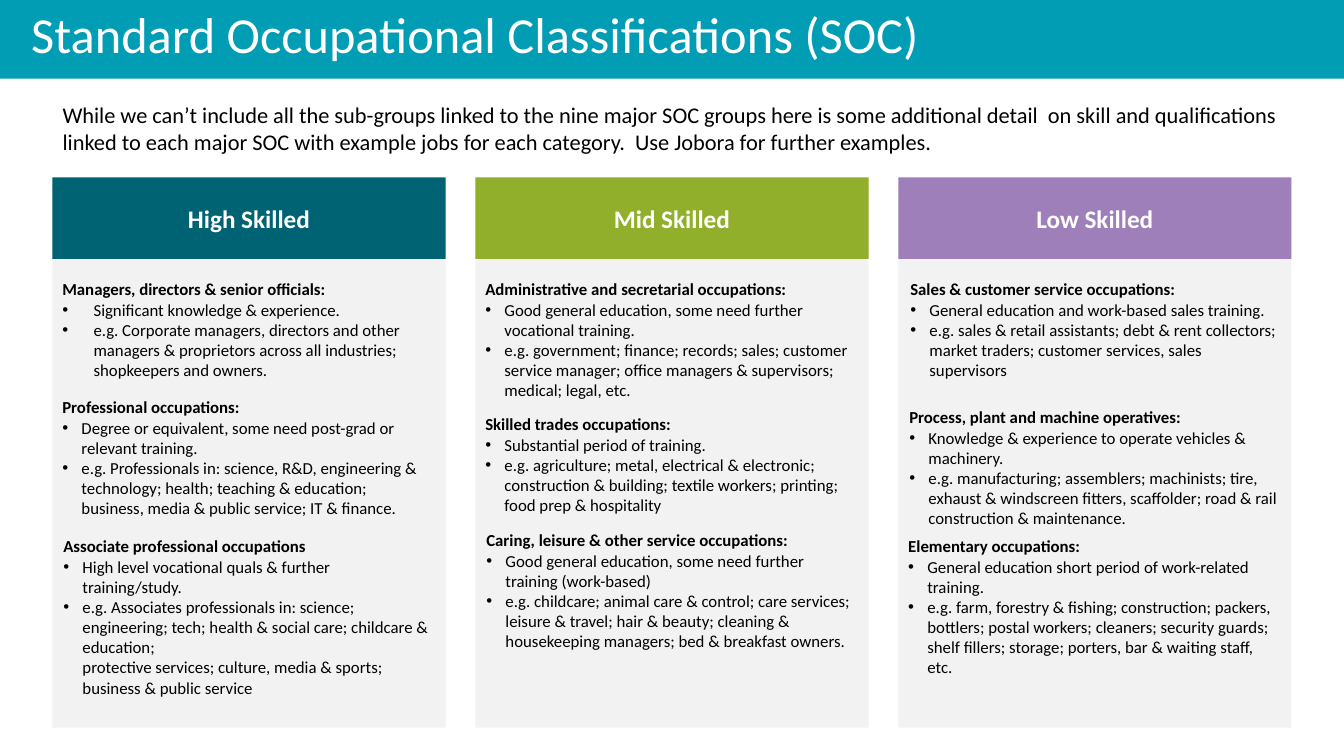
from dataclasses import dataclass

from lxml.etree import SubElement
from pptx import Presentation
from pptx.dml.color import RGBColor
from pptx.enum.shapes import MSO_SHAPE as Shape
from pptx.enum.text import MSO_ANCHOR as Anchor, MSO_AUTO_SIZE as Fit, PP_ALIGN as Align
from pptx.oxml.ns import qn
from pptx.util import Inches, Pt

# Grid of square cells, 0.2 inch each; a text line of 12 pt fills one row
CELL = 0.2
WIDE, HIGH = 66.65, 37.5
EDGE, COL = 2.6, 19.5
GAP = (WIDE - 2 * EDGE - 3 * COL) / 2
HEAD_TOP, PANEL_TOP, LIST_TOP = 8.8, 8.85, 13.6
LIST_WIDE = 19.35
FONT = "Calibri"


@dataclass
class Group:
    row: float  # rows below the top of the lists
    lines: int
    title: str
    items: list[str]
    shift: float = 0
    hang: float = 0.95


@dataclass
class Column:
    name: str
    color: str
    groups: list[Group]


COLUMNS = [
    Column("High Skilled", "006373", [
        Group(0, 5, "Managers, directors & senior officials:", [
            "Significant knowledge & experience.",
            "e.g. Corporate managers, directors and other managers & proprietors "
            "across all industries; shopkeepers and owners."], hang=1.55),
        Group(5.85, 6, "Professional occupations:", [
            "Degree or equivalent, some need post-grad or relevant training.",
            "e.g. Professionals in: science, R&D, engineering & technology; health; "
            "teaching & education; business, media & public service; IT & finance."]),
        Group(12.75, 8, "Associate professional occupations", [
            "High level vocational quals & further training/study.",
            "e.g. Associates professionals in: science; engineering; tech; "
            "health & social care; childcare & education;\n"
            "protective services; culture, media & sports; business & public service"],
            shift=0.05),
    ]),
    Column("Mid Skilled", "92AF2B", [
        Group(0, 6, "Administrative and secretarial occupations:", [
            "Good general education, some need further vocational training.",
            "e.g. government; finance; records; sales; customer service manager; "
            "office managers & supervisors; medical; legal, etc."]),
        Group(6.7, 5, "Skilled trades occupations:", [
            "Substantial period of training.",
            "e.g. agriculture; metal, electrical & electronic; construction & building; "
            "textile workers; printing; food prep & hospitality"]),
        Group(12.45, 6, "Caring, leisure & other service occupations:", [
            "Good general education, some need further training (work-based)",
            "e.g. childcare; animal care & control; care services; leisure & travel; "
            "hair & beauty; cleaning & housekeeping managers; bed & breakfast owners."],
            shift=0.05),
    ]),
    Column("Low Skilled", "9E7FBA", [
        Group(0, 5, "Sales & customer service occupations:", [
            "General education and work-based sales training.",
            "e.g. sales & retail assistants; debt & rent collectors; market traders; "
            "customer services, sales supervisors"], shift=0.1),
        Group(6.35, 6, "Process, plant and machine operatives:", [
            "Knowledge & experience to operate vehicles & machinery.",
            "e.g. manufacturing; assemblers; machinists; tire, exhaust & windscreen "
            "fitters, scaffolder; road & rail construction & maintenance."], shift=0.05),
        Group(12.75, 7, "Elementary occupations:", [
            "General education short period of work-related training.",
            "e.g. farm, forestry & fishing; construction; packers, bottlers; "
            "postal workers; cleaners; security guards; shelf fillers; storage; "
            "porters, bar & waiting staff, etc."]),
    ]),
]


def grid(cells: float) -> int:
    return Inches(cells * CELL)


def paint(target, color: str) -> None:
    target.rgb = RGBColor.from_string(color)


def write(para, text: str, size: int, color: str = "000000", bold: bool = False) -> None:
    para.space_before = Pt(0)
    for num, line in enumerate(text.split("\n")):
        if num:
            para.add_line_break()
        run = para.add_run()
        run.text = line
        run.font.name, run.font.size, run.font.bold = FONT, Pt(size), bold
        paint(run.font.color, color)


def indent(para, hang: float, mark: str = "") -> None:
    props = para._p.get_or_add_pPr()
    props.set("marL", str(grid(hang)))
    props.set("indent", str(-grid(hang)))
    if mark:
        SubElement(props, qn("a:buFont"), typeface="Arial")
        SubElement(props, qn("a:buChar"), char=mark)
    else:
        SubElement(props, qn("a:buNone"))


def block(slide, left: float, top: float, wide: float, high: float, color: str):
    box = slide.shapes.add_shape(
        Shape.RECTANGLE, grid(left), grid(top), grid(wide), grid(high))
    box.shadow.inherit = False
    box.fill.solid()
    paint(box.fill.fore_color, color)
    box.line.fill.background()
    return box


def place(holder, left: float, top: float, wide: float, high: float):
    holder.left, holder.top = grid(left), grid(top)
    holder.width, holder.height = grid(wide), grid(high)
    frame = holder.text_frame
    frame.word_wrap, frame.auto_size = True, Fit.NONE
    frame.vertical_anchor = Anchor.TOP
    para = frame.paragraphs[0]
    para.alignment = Align.LEFT
    return para


def listing(slide, left: float, group: Group) -> None:
    box = slide.shapes.add_textbox(
        grid(left + group.shift), grid(LIST_TOP + group.row),
        grid(LIST_WIDE), grid(group.lines + 1.75))
    frame = box.text_frame
    frame.word_wrap = True
    write(frame.paragraphs[0], group.title, 12, bold=True)
    for item in group.items:
        para = frame.add_paragraph()
        write(para, item, 12)
        indent(para, group.hang, "•")


def column(slide, left: float, col: Column) -> None:
    block(slide, left, PANEL_TOP, COL, 27.25, "F2F2F2")
    head = block(slide, left, HEAD_TOP, COL, 4.05, col.color)
    head.text_frame.vertical_anchor = Anchor.MIDDLE
    para = head.text_frame.paragraphs[0]
    para.alignment = Align.CENTER
    write(para, col.name, 18, "FFFFFF", True)
    for group in col.groups:
        listing(slide, left, group)


def main() -> None:
    deck = Presentation()
    deck.slide_width, deck.slide_height = grid(WIDE), grid(HIGH)
    slide = deck.slides.add_slide(deck.slide_layouts[1])
    title, intro = slide.placeholders

    # Title on its band
    band = block(slide, 0, 0, WIDE, 3.9, "009DB5")
    title.element.addprevious(band.element)
    para = place(title, 1.05, -0.1, 45.5, 3.55)
    write(para, "Standard Occupational Classifications (SOC)", 36, "FFFFFF")

    # Introduction
    para = place(intro, EDGE, 4.75, 61.3, 3.2)
    write(para, "While we can’t include all the sub-groups linked to the nine major SOC "
          "groups here is some additional detail  on skill and qualifications linked to "
          "each major SOC with example jobs for each category.  Use Jobora for further "
          "examples.", 16)
    indent(para, 0)

    # Skill columns
    for num, col in enumerate(COLUMNS):
        column(slide, EDGE + num * (COL + GAP), col)
    deck.save("out.pptx")


if __name__ == "__main__":
    main()
